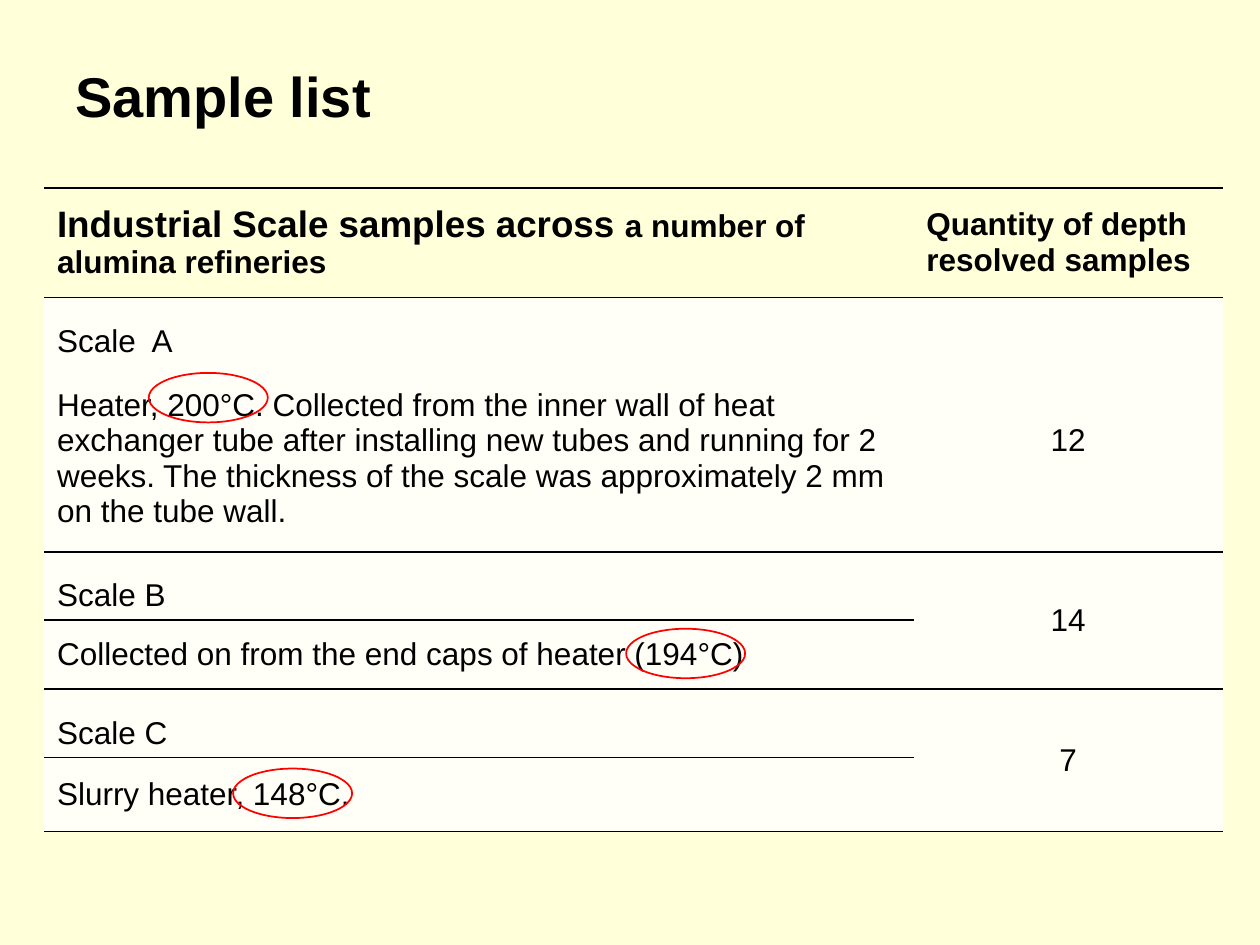
from pptx import Presentation
from pptx.dml.color import RGBColor
from pptx.enum.shapes import MSO_SHAPE as Shape
from pptx.enum.text import MSO_ANCHOR as Anchor, PP_ALIGN as Align
from pptx.oxml.ns import qn
from pptx.util import Pt
from lxml.etree import SubElement

BLACK = RGBColor(0x00, 0x00, 0x00)
RED = RGBColor(0xFF, 0x00, 0x00)
CREAM = RGBColor(0xFF, 0xFF, 0xD9)
IVORY = RGBColor(0xFF, 0xFF, 0xF7)

COLUMN_WIDTHS = (496.8, 176.4)
ROW_HEIGHTS = (62.6, 38.9, 106.6, 38.9, 39.6, 38.9, 42.5)
RULED_EDGES = ({0, 1, 3, 4, 5, 6, 7}, {0, 1, 3, 5, 7})
DESCRIPTIONS = (
    "Scale  A",
    "Heater, 200°C. Collected from the inner wall of heat exchanger tube "
    "after installing new tubes and running for 2 weeks. The thickness of "
    "the scale was approximately 2 mm on the tube wall.",
    "Scale B",
    "Collected on from the end caps of heater (194°C)",
    "Scale C",
    "Slurry heater, 148°C.",
)
QUANTITIES = {2: "12", 3: "14", 5: "7"}
MERGED_ROWS = (3, 5)
RING_CORNERS = ((85, 213.1), (357.8, 359.3), (133.2, 439.2))


def add_text(para, text, size=18, bold=False, align=Align.LEFT):
    para.alignment = align
    span = para.add_run()
    span.text = text
    span.font.name = "Arial"
    span.font.size = Pt(size)
    span.font.bold = bold
    span.font.color.rgb = BLACK


def add_title(page):
    box = page.shapes.add_textbox(Pt(36), Pt(9.4), Pt(648), Pt(90))
    frame = box.text_frame
    frame.word_wrap = True
    frame.vertical_anchor = Anchor.MIDDLE
    add_text(frame.paragraphs[0], "Sample list", size=32, bold=True)


def set_borders(cell, top, bottom):
    properties = cell._tc.get_or_add_tcPr()
    sides = (("lnL", False), ("lnR", False), ("lnT", top), ("lnB", bottom))
    for name, ruled in sides:
        line = SubElement(properties, qn(f"a:{name}"), w=str(Pt(1)))
        if ruled:
            fill = SubElement(line, qn("a:solidFill"))
            SubElement(fill, qn("a:srgbClr"), val=str(BLACK))
        else:
            SubElement(line, qn("a:noFill"))


def style_cell(cell, row, column):
    edges = RULED_EDGES[column]
    height = cell.span_height if cell.is_merge_origin else 1
    set_borders(cell, row in edges, row + height in edges)
    if row == 0:
        cell.fill.background()
    else:
        cell.fill.solid()
        cell.fill.fore_color.rgb = IVORY
    cell.vertical_anchor = Anchor.MIDDLE


def fill_table(table):
    heading = table.cell(0, 0).text_frame.paragraphs[0]
    add_text(heading, "Industrial Scale samples across ", size=21, bold=True)
    add_text(heading, "a number of alumina refineries", bold=True)
    add_text(table.cell(0, 1).text_frame.paragraphs[0],
             "Quantity of depth resolved samples", bold=True)
    for row, text in enumerate(DESCRIPTIONS, start=1):
        cell = table.cell(row, 0)
        if row % 2:
            cell.vertical_anchor = Anchor.BOTTOM
        add_text(cell.text_frame.paragraphs[0], text)
    for row, text in QUANTITIES.items():
        add_text(table.cell(row, 1).text_frame.paragraphs[0], text,
                 align=Align.CENTER)
    table.cell(2, 1).margin_bottom = Pt(24)


def add_sample_table(page):
    table = page.shapes.add_table(
        len(ROW_HEIGHTS), len(COLUMN_WIDTHS), Pt(25.4), Pt(107.3),
        Pt(sum(COLUMN_WIDTHS)), Pt(sum(ROW_HEIGHTS))).table
    table.first_row = table.horz_banding = False
    for column, width in zip(table.columns, COLUMN_WIDTHS):
        column.width = Pt(width)
    for row, height in zip(table.rows, ROW_HEIGHTS):
        row.height = Pt(height)
    for row in MERGED_ROWS:
        table.cell(row, 1).merge(table.cell(row + 1, 1))
    for row in range(len(ROW_HEIGHTS)):
        for column in range(len(COLUMN_WIDTHS)):
            style_cell(table.cell(row, column), row, column)
    fill_table(table)


def add_ring(page, left, top):
    ring = page.shapes.add_shape(Shape.OVAL, Pt(left), Pt(top), Pt(68), Pt(28.3))
    ring.shadow.inherit = False
    ring.fill.background()
    ring.line.color.rgb = RED
    ring.line.width = Pt(1)


def main():
    deck = Presentation()
    deck.slide_width, deck.slide_height = Pt(720), Pt(540)
    page = deck.slides.add_slide(deck.slide_layouts[6])
    page.background.fill.solid()
    page.background.fill.fore_color.rgb = CREAM
    add_title(page)
    add_sample_table(page)
    for left, top in RING_CORNERS:
        add_ring(page, left, top)
    deck.save("out.pptx")


if __name__ == "__main__":
    main()
